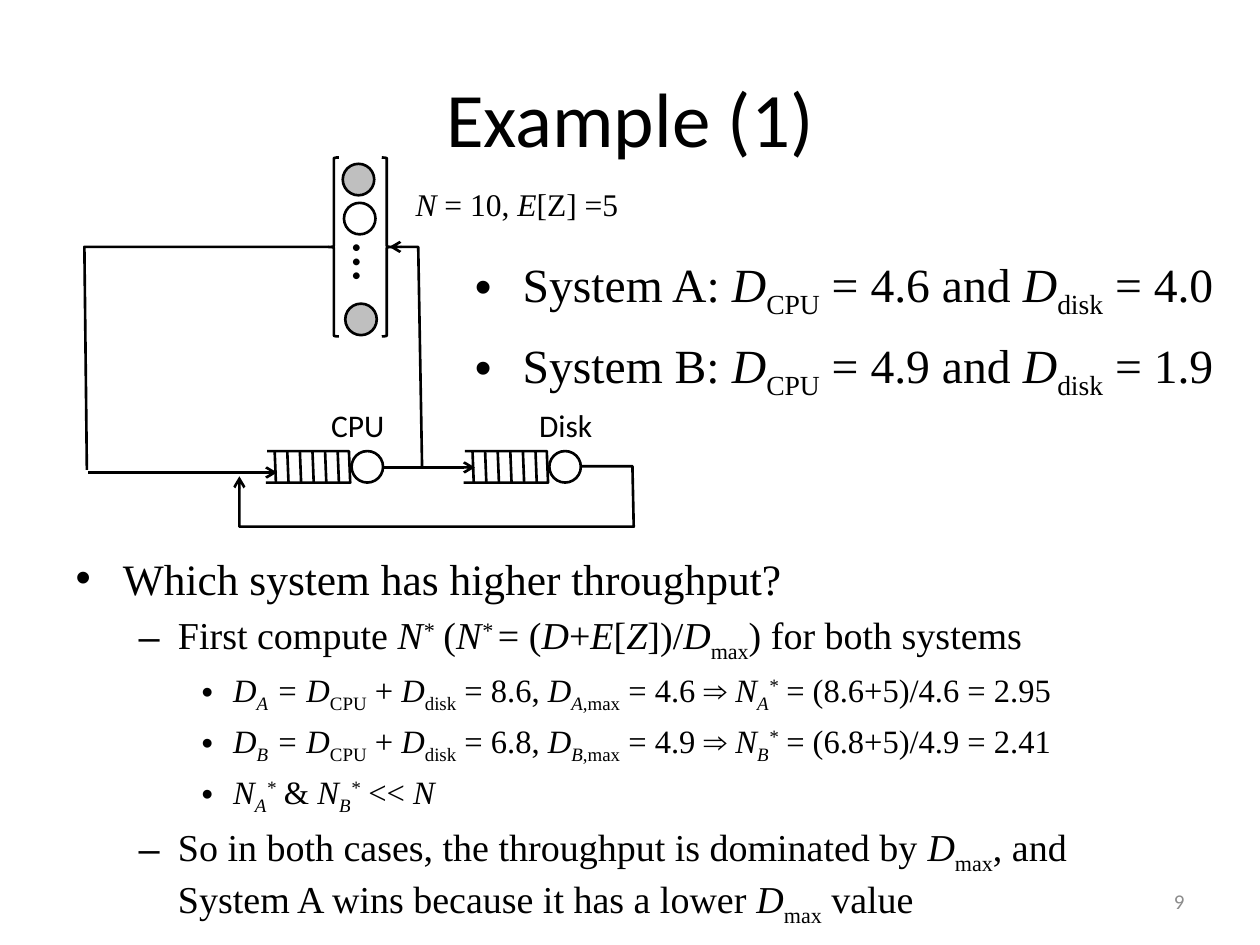
from lxml import etree
from pptx import Presentation
from pptx.dml.color import RGBColor
from pptx.enum.shapes import MSO_CONNECTOR, MSO_SHAPE
from pptx.enum.text import MSO_ANCHOR, MSO_AUTO_SIZE, PP_ALIGN
from pptx.oxml.ns import qn
from pptx.util import Inches, Pt

STRAIGHT = MSO_CONNECTOR.STRAIGHT
OVAL = MSO_SHAPE.OVAL
SERIF, SANS = "Times New Roman", "Calibri"
# First letter of a marked part: italic, baseline shift in 1/1000 percent
MARKS = {"/": (True, 0), "_": (False, -25000), "~": (True, -25000), "^": (True, 30000)}


def write(par, text, size, face, color="000000"):
    """Fill a paragraph with parts split at |, each led by a key of MARKS or plain."""
    par.font.size, par.font.name = Pt(size), face
    par.font.color.rgb = RGBColor.from_string(color)
    for part in text.split("|"):
        run = par.add_run()
        slant, shift = MARKS.get(part[0], (False, 0))
        run.text = part[1:] if part[0] in MARKS else part
        if slant:
            run.font.italic = True
        if shift:
            run.font._element.set("baseline", str(shift))


def ink(item, fill=None, arrow=False):
    """Give a shape or connector a black outline, no shadow, and a fill if named."""
    item.line.color.rgb = RGBColor.from_string("000000")
    item.line.width = Pt(1.5)
    if arrow:
        etree.SubElement(item.line._get_or_add_ln(), qn("a:tailEnd"), type="arrow")
    if hasattr(item, "shadow"):
        item.shadow.inherit = False
    else:
        etree.SubElement(item._element.spPr, qn("a:effectLst"))
    if fill:
        item.fill.solid()
        item.fill.fore_color.rgb = RGBColor.from_string(fill)
    elif hasattr(item, "fill"):
        item.fill.background()


deck = Presentation()
deck.slide_width, deck.slide_height = Inches(10), Inches(7.5)
slide = deck.slides.add_slide(deck.slide_layouts[1])
shapes = slide.shapes

# Title and list
title, body = slide.placeholders
title.left, title.top, title.width, title.height = map(Inches, (0.5, 0.3, 9, 1.25))
write(title.text_frame.paragraphs[0], "Example (1)", 44, SANS)

body.left, body.top, body.width, body.height = map(Inches, (0.5, 4.33, 9, 3))
frame = body.text_frame
frame.auto_size = MSO_AUTO_SIZE.NONE
demand = "/D|~{0}|/ = D|_CPU| + |/D|_disk| = {1}, |/D|~{0}|_,max| = {2} ⇒ |/N|~{0}|^*| = ({1}+5)/{2} = {3}"
points = [
    (0, "Which system has higher throughput?"),
    (1, "First compute |/N|^*| (|/N|^* |= (|/D|+|/E|[|/Z|])/|/D|_max|) for both systems"),
    (2, demand.format("A", "8.6", "4.6", "2.95")),
    (2, demand.format("B", "6.8", "4.9", "2.41")),
    (2, "/N|~A|^*| &|/ N|~B|^*| << |/N"),
    (1, "So in both cases, the throughput is dominated by |/D|_max|"
        ", and System A wins because it has a lower |/D|_max| value"),
]
for i, (level, text) in enumerate(points):
    par = frame.add_paragraph() if i else frame.paragraphs[0]
    par.level = level
    write(par, text, (24.8, 21.7, 18.6)[level], SERIF)

# Terminals between two braces
for kind, left in ((MSO_SHAPE.LEFT_BRACE, 2.61), (MSO_SHAPE.RIGHT_BRACE, 3.03)):
    ink(shapes.add_shape(kind, Inches(left), Inches(1.25), Inches(0.08), Inches(1.42)))
circles = [(2.72, 1.3, "BFBFBF"), (2.73, 1.61, "FFFFFF"), (2.74, 2.41, "BFBFBF")]

# Queues with slots, each followed by its server
paths = [
    ([(2.61, 1.96), (0.67, 1.96), (0.69, 3.73)], False),
    ([(4.62, 3.7), (5.02, 3.7), (5.03, 4.18), (1.9, 4.18), (1.9, 3.78)], True),
    ([(3.35, 3.7), (3.32, 1.96), (3.09, 1.96)], True),
]
lines = [(0.7, 3.75, 2.2, 3.75, True), (3.04, 3.71, 3.77, 3.71, True)]
for left in (2.11, 3.68):
    paths.append(([(left + 0.01, 3.58), (left + 0.66, 3.58),
                   (left + 0.67, 3.83), (left, 3.83)], False))
    for i in range(6):
        x = left + 0.07 + 0.1 * i
        lines.append((x, 3.58, x + 0.01, 3.83, False))
    circles.append((left + 0.68, 3.58, "FFFFFF"))

for left, top, fill in circles:
    ink(shapes.add_shape(OVAL, Inches(left), Inches(top), Inches(0.25), Inches(0.25)), fill)
for path, arrow in paths:
    start, *rest = [(Inches(x), Inches(y)) for x, y in path]
    pen = shapes.build_freeform(*start)
    pen.add_line_segments(rest, close=False)
    ink(pen.convert_to_shape(), arrow=arrow)
for *ends, arrow in lines:
    ink(shapes.add_connector(STRAIGHT, *map(Inches, ends)), arrow=arrow)

# Labels
labels = [
    (2.36, 1.83, 0.74, 0.5, "…", 32, SANS),
    (4.18, 3.17, 0.67, 0.4, "Disk", 18, SANS),
    (2.53, 3.17, 0.67, 0.4, "CPU", 18, SANS),
    (3.2, 1.42, 1.89, 0.4, "/N |= 10, |/E|[Z] =5", 18, SERIF),
]
for *place, text, size, face in labels:
    frame = shapes.add_textbox(*map(Inches, place)).text_frame
    frame.word_wrap = True
    if text == "…":
        frame._txBody.bodyPr.set("vert", "vert270")
    write(frame.paragraphs[0], text, size, face)

# Service demands of the two systems
box = shapes.add_textbox(Inches(3.67), Inches(1.92), Inches(6.17), Inches(1.33))
frame = box.text_frame
frame.word_wrap = True
for i, (name, cpu, disk) in enumerate((("A", "4.6", "4.0"), ("B", "4.9", "1.9"))):
    par = frame.add_paragraph() if i else frame.paragraphs[0]
    par.line_spacing, par.space_before = 1.1, Pt(5.4)
    props = par._p.get_or_add_pPr()
    props.set("marL", str(Inches(0.38)))
    props.set("indent", str(Inches(-0.38)))
    etree.SubElement(props, qn("a:buFont"), typeface="Arial")
    etree.SubElement(props, qn("a:buChar"), char="•")
    write(par, f"System {name}: |/D|_CPU| = {cpu} and |/D|_disk| = {disk}", 27.2, SERIF)

# Slide number
box = shapes.add_textbox(Inches(7.17), Inches(6.95), Inches(2.33), Inches(0.4))
frame = box.text_frame
frame.word_wrap = True
frame.vertical_anchor = MSO_ANCHOR.MIDDLE
frame.paragraphs[0].alignment = PP_ALIGN.RIGHT
write(frame.paragraphs[0], "9", 12, SANS, "8C8C8C")

deck.save("out.pptx")
